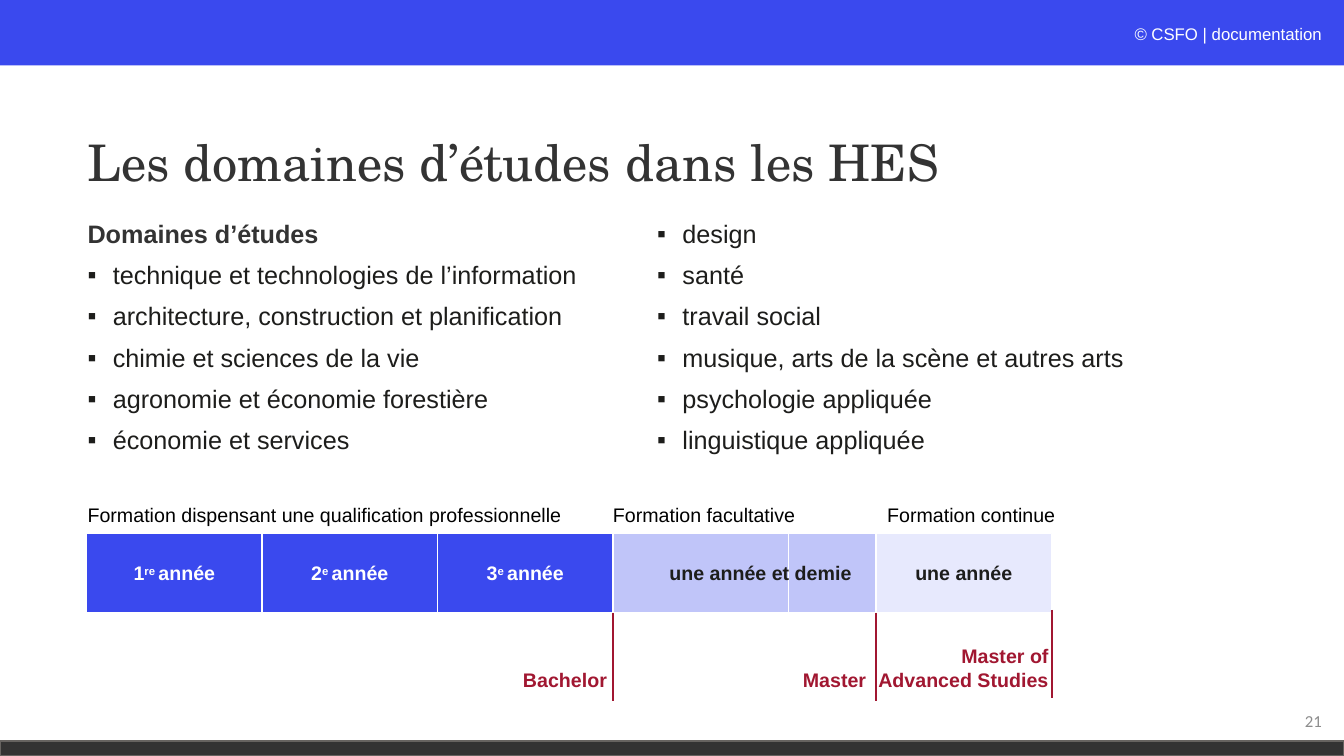
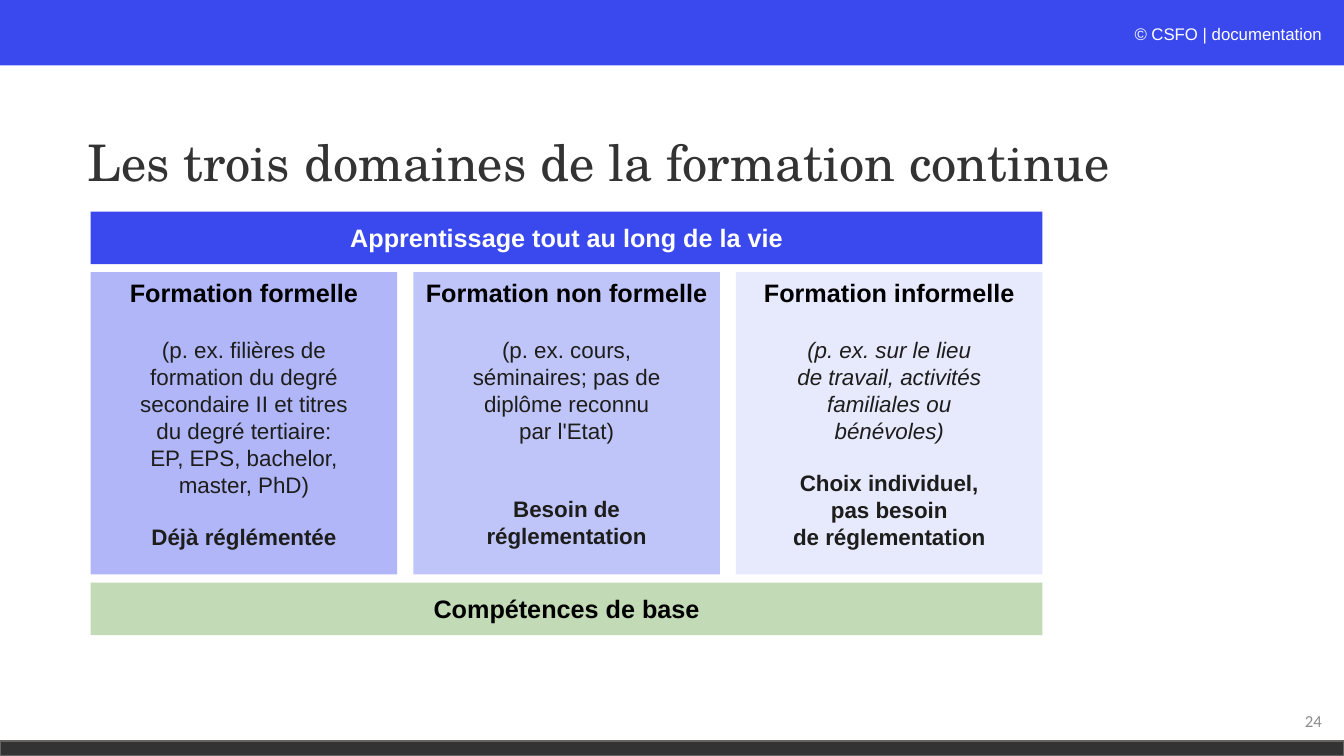
"""Build two slides on study fields and continuing education."""
from lxml import etree
from pptx import Presentation, util as u
from pptx.dml.color import RGBColor
from pptx.enum import shapes, text
from pptx.oxml.ns import qn


class Theme:
    blue, deep, mid, pale = "3A49EE", "B0B6F8", "C0C5F9", "E7E9FD"
    green, red, white, black = "C2DAB6", "A11731", "FFFFFF", "000000"
    dark, ink, grey, edge, mark = "333333", "1D1D1B", "8C8C8C", "666360", "FCFDFE"
    sans, serif, plain = "Arial", "TeX Gyre Schola", "Calibri"
    title, head, body, label, small = 36, 18, 16, 14, 12


LEFT, MID, RIGHT = text.PP_ALIGN.LEFT, text.PP_ALIGN.CENTER, text.PP_ALIGN.RIGHT
TOP, CENTER = text.MSO_ANCHOR.TOP, text.MSO_ANCHOR.MIDDLE

OWNER = [("© ", {"color": Theme.mark, "italic": True}), ("CSFO | documentation", {})]

FIELDS = [
    [
        "Domaines d’études",
        "technique et technologies de l’information",
        "architecture, construction et planification",
        "chimie et sciences de la vie",
        "agronomie et économie forestière",
        "économie et services",
    ],
    [
        "design",
        "santé",
        "travail social",
        "musique, arts de la scène et autres arts",
        "psychologie appliquée",
        "linguistique appliquée",
    ],
]

RAISED = {"raised": True}
YEARS = [
    (1, Theme.blue, Theme.white, [("1", {}), ("re ", RAISED), ("année", {})]),
    (1, Theme.blue, Theme.white, [("2", {}), ("e ", RAISED), ("année", {})]),
    (1, Theme.blue, Theme.white, [("3", {}), ("e ", RAISED), ("année", {})]),
    (1, Theme.mid, Theme.ink, ""),
    (0.5, Theme.mid, Theme.ink, ""),
    (1, Theme.pale, Theme.ink, "une année"),
]
EXTRA = "une année et demie"

STAGES = [
    (0.77, 4.92, "Formation dispensant une qualification professionnelle"),
    (5.98, 2.02, "Formation facultative"),
    (8.7, 1.88, "Formation continue"),
]

DEGREES = [
    (3, 6.08, 6.12, 6.58, ["Bachelor"]),
    (4.5, 6.08, 8.69, 6.58, ["Master"]),
    (5.5, 6.05, 10.5, 6.34, ["Master of", "Advanced Studies"]),
]

BANDS = [
    (2.1, Theme.blue, Theme.white, "Apprentissage tout au long de la vie"),
    (5.78, Theme.green, Theme.black, "Compétences de base"),
]

FORMS = [
    {
        "fill": Theme.deep,
        "head": "Formation formelle",
        "cases": [
            "(p. ex. filières de",
            "formation du degré",
            "secondaire II et titres",
            "du degré tertiaire:",
            "EP, EPS, bachelor,",
            "master, PhD)",
        ],
        "rule": ["Déjà réglémentée"],
        "gap": 18.4,
        "italic": False,
    },
    {
        "fill": Theme.mid,
        "head": "Formation non formelle",
        "cases": [
            "(p. ex. cours,",
            "séminaires; pas de",
            "diplôme reconnu",
            "par l'Etat)",
        ],
        "rule": ["Besoin de", "réglementation"],
        "gap": 36.8,
        "italic": False,
    },
    {
        "fill": Theme.pale,
        "head": "Formation informelle",
        "cases": [
            "(p. ex. sur le lieu",
            "de travail, activités",
            "familiales ou",
            "bénévoles)",
        ],
        "rule": ["Choix individuel,", "pas besoin", "de réglementation"],
        "gap": 18.4,
        "italic": True,
    },
]


def rgb(code):
    return RGBColor.from_string(code)


def write(frame, words, size=Theme.label, color=Theme.ink, font=Theme.sans,
          bold=False, italic=False, align=LEFT, before=0, lines=None, bullet=None):
    """Add one paragraph, given as a string or as (text, format) runs."""
    first = frame.paragraphs[0]
    para = frame.add_paragraph() if first.runs else first
    para.alignment = align
    if before:
        para.space_before = u.Pt(before)
    if lines:
        para.line_spacing = lines
    if bullet:
        props = para._p.get_or_add_pPr()
        props.set("marL", str(u.Inches(0.25)))
        props.set("indent", str(-u.Inches(0.25)))
        etree.SubElement(props, qn("a:buFont")).set("typeface", Theme.sans)
        etree.SubElement(props, qn("a:buChar")).set("char", bullet)
    for part, own in [(words, {})] if isinstance(words, str) else words:
        run = para.add_run()
        run.text = part
        run.font.name = font
        run.font.size = u.Pt(size)
        run.font.bold = bold
        run.font.italic = own.get("italic", italic)
        run.font.color.rgb = rgb(own.get("color", color))
        if own.get("raised"):
            run._r.get_or_add_rPr().set("baseline", "30000")


def label(slide, x, y, w, h, anchor=TOP, wrap=True):
    frame = slide.shapes.add_textbox(*map(u.Inches, (x, y, w, h))).text_frame
    frame.word_wrap = wrap
    frame.vertical_anchor = anchor
    return frame


def box(slide, x, y, w, h, fill, line=None, anchor=CENTER):
    shape = slide.shapes.add_shape(
        shapes.MSO_SHAPE.RECTANGLE, *map(u.Inches, (x, y, w, h)))
    shape.shadow.inherit = False
    shape.fill.solid()
    shape.fill.fore_color.rgb = rgb(fill)
    if line:
        shape.line.color.rgb = rgb(line)
        shape.line.width = u.Pt(1)
    else:
        shape.line.fill.background()
    shape.text_frame.word_wrap = True
    shape.text_frame.vertical_anchor = anchor
    return shape.text_frame


def stroke(slide, x, top, high):
    line = slide.shapes.add_connector(
        shapes.MSO_CONNECTOR.STRAIGHT, *map(u.Inches, (x, top, x, top + high)))
    line.line.color.rgb = rgb(Theme.red)
    line.line.width = u.Pt(1.5)
    etree.SubElement(line._element.spPr, qn("a:effectLst"))


def start(deck, title, number):
    slide = deck.slides.add_slide(deck.slide_layouts[6])
    box(slide, 0, 0, 13.33, 0.65, Theme.blue)
    box(slide, 0, 7.35, 13.33, 0.15, Theme.dark, Theme.edge)
    write(label(slide, 8.62, 0.19, 4.59, 0.3), OWNER,
          size=Theme.small, color=Theme.white, align=RIGHT)
    write(label(slide, 10.21, 6.95, 3, 0.4, CENTER), number,
          size=Theme.small, color=Theme.grey, font=Theme.plain, align=RIGHT)
    write(label(slide, 0.77, 0.91, 11.5, 1.45, CENTER), title,
          size=Theme.title, color=Theme.dark, font=Theme.serif, lines=0.9)
    return slide


def fields(deck):
    slide = start(deck, "Les domaines d’études dans les HES", "21")
    for col, items in enumerate(FIELDS):
        frame = label(slide, 0.77 + col * 5.65, 2.15, 5.65, 2.42)
        for row, item in enumerate(items):
            head = col == row == 0
            write(frame, item, size=Theme.head, bold=head, lines=0.9,
                  color=Theme.dark if head else Theme.ink,
                  before=10 if row else 0, bullet=None if head else "▪")

    left, year = 0.86, 1.74
    x = left
    for span, fill, color, words in YEARS:
        frame = box(slide, x, 5.29, span * year, 0.79, fill, Theme.white)
        if words:
            write(frame, words, color=color, bold=True, align=MID)
        x += span * year
    write(label(slide, 6.54, 5.52, 2.02, 0.34, wrap=False), EXTRA, bold=True)

    for x, wide, words in STAGES:
        write(label(slide, x, 4.94, wide, 0.34, wrap=False), words, color=Theme.black)
    for years, top, right, y, names in DEGREES:
        frame = label(slide, right - 1.9, y, 1.9, 0.34, wrap=False)
        for name in names:
            write(frame, name, color=Theme.red, bold=True, align=RIGHT)
        stroke(slide, left + years * year, top, 0.87)


def forms(deck):
    slide = start(deck, "Les trois domaines de la formation continue", "24")
    left, full, wide = 0.9, 9.44, 3.04
    step = wide + (full - len(FORMS) * wide) / (len(FORMS) - 1)
    for y, fill, color, words in BANDS:
        write(box(slide, left, y, full, 0.52, fill), words,
              size=Theme.head, color=color, bold=True, align=MID)
    for col, form in enumerate(FORMS):
        frame = box(slide, left + col * step, 2.7, wide, 3, form["fill"], anchor=TOP)
        write(frame, form["head"], size=Theme.head, color=Theme.black,
              bold=True, align=MID)
        for row, line in enumerate(form["cases"]):
            write(frame, line, size=Theme.body, italic=form["italic"],
                  align=MID, before=0 if row else 20.7)
        for row, line in enumerate(form["rule"]):
            write(frame, line, size=Theme.body, bold=True,
                  align=MID, before=0 if row else form["gap"])


def main():
    deck = Presentation()
    deck.slide_width, deck.slide_height = u.Inches(13.33), u.Inches(7.5)
    fields(deck)
    forms(deck)
    deck.save("out.pptx")


if __name__ == "__main__":
    main()
